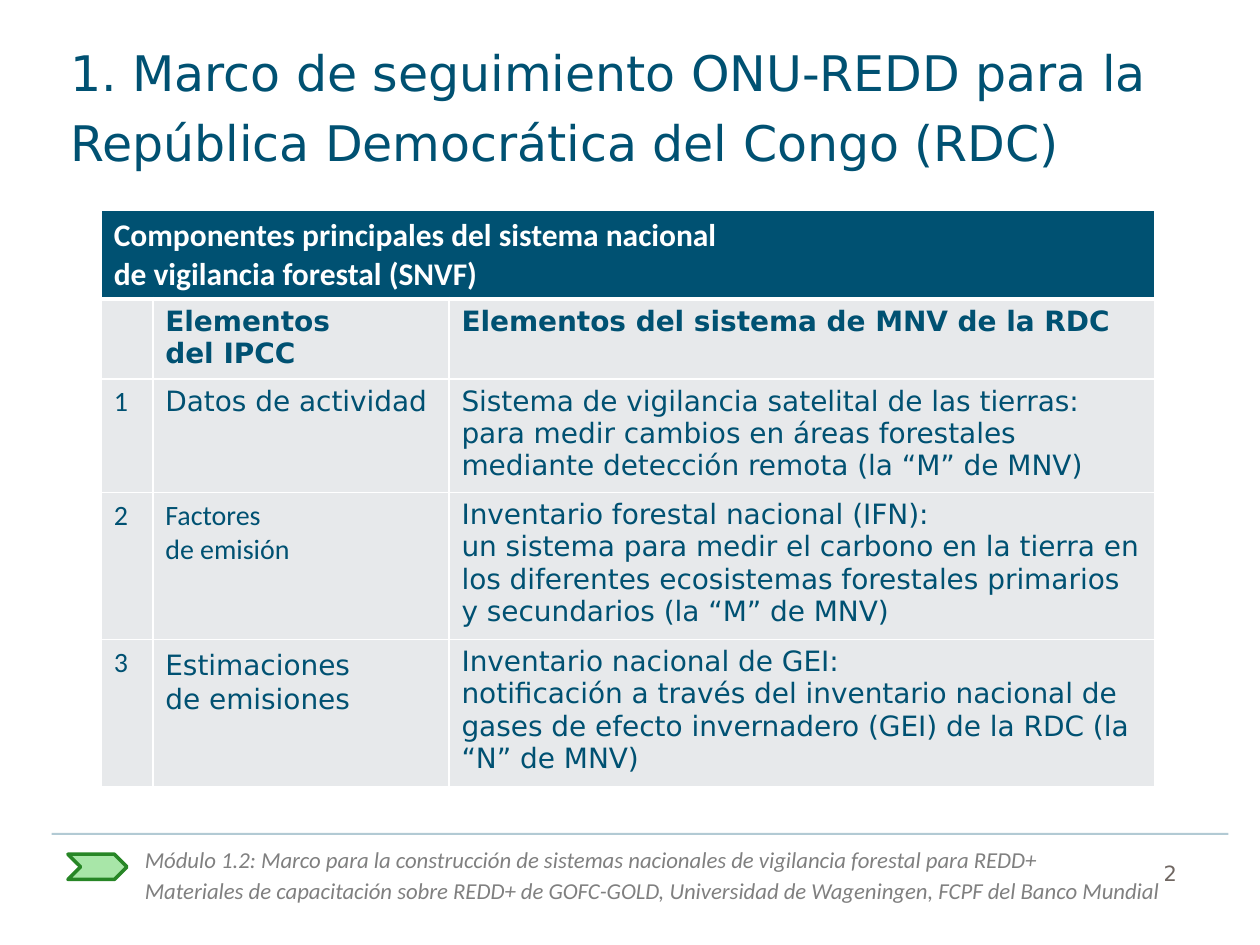
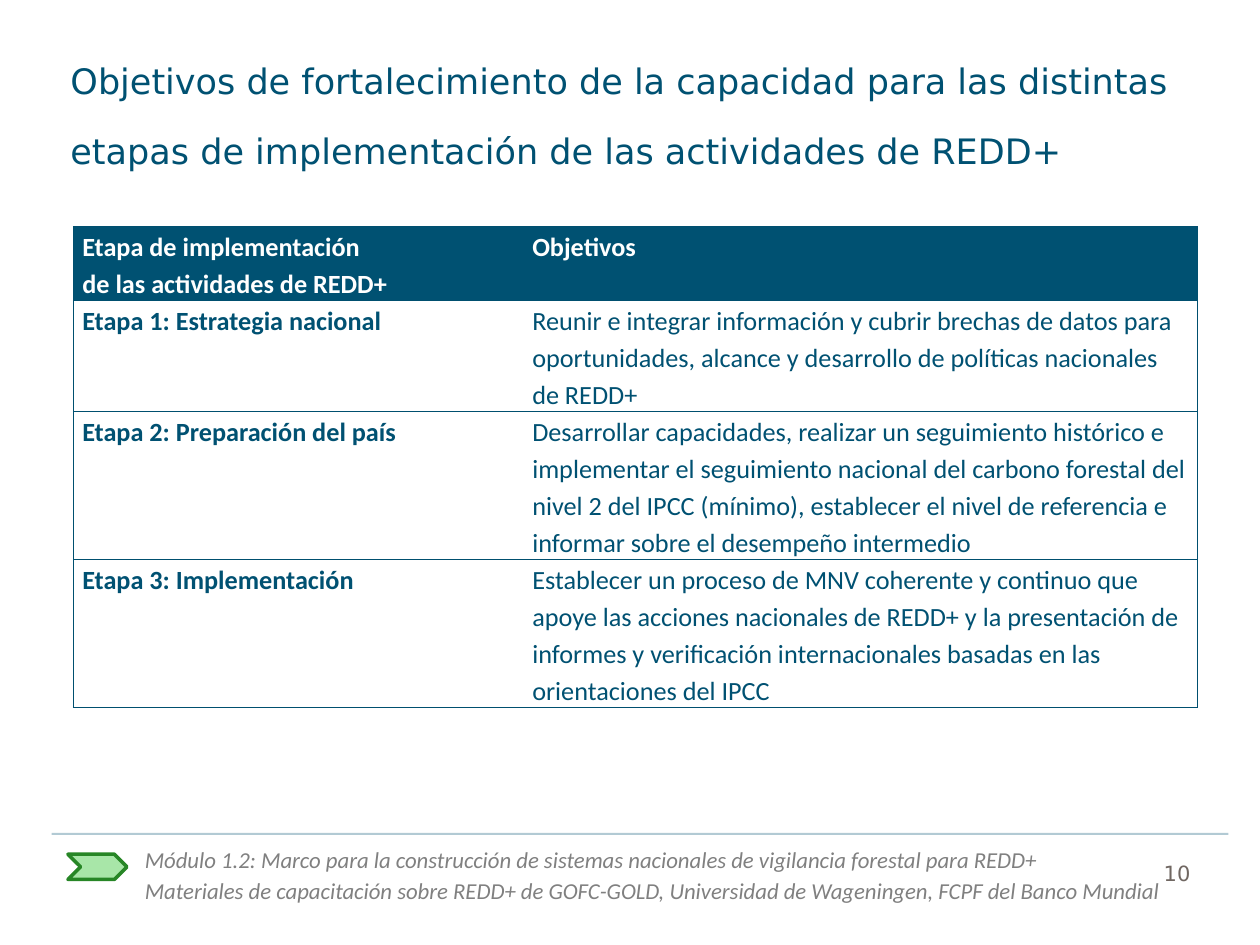
from lxml import etree
from pptx import Presentation
from pptx.dml.color import RGBColor
from pptx.enum import shapes, text
from pptx.oxml import ns
from pptx.util import Cm, Pt

# Shared colours and fonts
TEAL = RGBColor(0x00, 0x51, 0x72)
RULE = RGBColor(0x00, 0x4F, 0x6F)
WHITE = RGBColor(0xFF, 0xFF, 0xFF)
PALE = RGBColor(0xE7, 0xE9, 0xEB)
GREY = RGBColor(0x80, 0x80, 0x80)
BROWN = RGBColor(0x70, 0x67, 0x62)
LIME = RGBColor(0xA8, 0xE6, 0xA8)
GREEN = RGBColor(0x27, 0x86, 0x26)
SANS = "DejaVu Sans"
BODY = "Calibri"

FOOT = (
    "Módulo 1.2: Marco para la construcción de sistemas nacionales de vigilancia forestal para REDD+\n"
    "Materiales de capacitación sobre REDD+ de GOFC-GOLD, Universidad de Wageningen, FCPF del Banco Mundial"
)

PARTS = [
    ("Componentes principales del sistema nacional \vde vigilancia forestal (SNVF)", "", ""),
    ("", "Elementos \vdel IPCC", "Elementos del sistema de MNV de la RDC"),
    ("1", "Datos de actividad",
     "Sistema de vigilancia satelital de las tierras:\n"
     "para medir cambios en áreas forestales mediante detección remota (la “M” de MNV)"),
    ("2", "Factores \vde emisión",
     "Inventario forestal nacional (IFN):\n"
     "un sistema para medir el carbono en la tierra en los diferentes ecosistemas "
     "forestales primarios y secundarios (la “M” de MNV)"),
    ("3", "Estimaciones \vde emisiones",
     "Inventario nacional de GEI:\n"
     "notificación a través del inventario nacional de gases de efecto invernadero (GEI) "
     "de la RDC (la “N” de MNV)"),
]

STAGES = [
    ("Etapa de implementación \vde las actividades de REDD+", "Objetivos"),
    ("Etapa 1: Estrategia nacional",
     "Reunir e integrar información y cubrir brechas de datos para oportunidades, "
     "alcance y desarrollo de políticas nacionales de REDD+"),
    ("Etapa 2: Preparación del país",
     "Desarrollar capacidades, realizar un seguimiento histórico e implementar el "
     "seguimiento nacional del carbono forestal del nivel 2 del IPCC (mínimo), establecer "
     "el nivel de referencia e informar sobre el desempeño intermedio"),
    ("Etapa 3: Implementación",
     "Establecer un proceso de MNV coherente y continuo que apoye las acciones nacionales "
     "de REDD+ y la presentación de informes y verificación internacionales basadas en las "
     "orientaciones del IPCC"),
]


def write(frame, words, size, face, color, bold=False, italic=False, gap=None):
    """Fill a text frame with evenly styled paragraphs."""
    frame.word_wrap = True
    frame.text = words
    for para in frame.paragraphs:
        para.alignment = text.PP_ALIGN.LEFT
        if gap:
            para.line_spacing = gap
        font = para.font
        font.size, font.name = Pt(size), face
        font.bold, font.italic = bold, italic
        font.color.rgb = color


def edge(cell, side, color, width):
    """Add one cell border (L, R, T, B in that order); no colour hides it."""
    line = etree.SubElement(cell._tc.get_or_add_tcPr(), ns.qn("a:ln" + side), w=str(Pt(width)))
    if color is None:
        etree.SubElement(line, ns.qn("a:noFill"))
    else:
        fill = etree.SubElement(line, ns.qn("a:solidFill"))
        etree.SubElement(fill, ns.qn("a:srgbClr"), val=str(color))


def grid(slide, left, top, cols, rows):
    """Add a plain table with the given column widths and row heights in cm."""
    frame = slide.shapes.add_table(len(rows), len(cols), Cm(left), Cm(top),
                                   Cm(sum(cols)), Cm(sum(rows)))
    table = frame.table
    table.first_row = table.horz_banding = False
    for col, width in zip(table.columns, cols):
        col.width = Cm(width)
    for row, height in zip(table.rows, rows):
        row.height = Cm(height)
    return table


def head(slide, words, size, left, top, width, height):
    title = slide.shapes.title
    title.left, title.top = Cm(left), Cm(top)
    title.width, title.height = Cm(width), Cm(height)
    frame = title.text_frame
    frame.auto_size = text.MSO_AUTO_SIZE.NONE
    frame.vertical_anchor = text.MSO_ANCHOR.TOP
    frame.margin_left, frame.margin_right = Cm(0.05), Cm(0.25)
    frame.margin_top, frame.margin_bottom = 0, Cm(0.89)
    write(frame, words, size, SANS, TEAL, gap=Pt(40))


def foot(slide, number, left, top, width):
    # Module and source
    note = slide.shapes.add_textbox(Cm(left + 1.63), Cm(top + 0.03), Cm(21.34), Cm(1.55))
    write(note.text_frame, FOOT, 13, BODY, GREY, italic=True, gap=Pt(18))

    # Green marker
    mark = slide.shapes.add_shape(shapes.MSO_SHAPE.CHEVRON, Cm(left + 0.33), Cm(top + 0.41),
                                  Cm(1.19), Cm(0.51))
    mark.shadow.inherit = False
    mark.fill.solid()
    mark.fill.fore_color.rgb = LIME
    mark.line.color.rgb = GREEN
    mark.line.width = Pt(2)

    # Page number
    page = slide.shapes.add_textbox(Cm(left + width - 1.55), Cm(top + 0.28), Cm(1.55), Cm(0.84))
    write(page.text_frame, number, 12, SANS, BROWN, gap=Pt(18))

    # Faint rule
    rule = slide.shapes.add_connector(shapes.MSO_CONNECTOR.STRAIGHT, Cm(left), Cm(top),
                                      Cm(left + width), Cm(top))
    rule.line.color.rgb = TEAL
    rule.line.width = Pt(1.25)
    tint = rule._element.spPr.find(".//" + ns.qn("a:srgbClr"))
    etree.SubElement(tint, ns.qn("a:alpha"), val="30000")
    etree.SubElement(rule._element.spPr, ns.qn("a:effectLst"))


def parts(slide, left, top):
    """Table of monitoring system components."""
    table = grid(slide, left, top, (1.04, 5.97, 14.22), (1.79, 1.55, 2.21, 2.87, 2.87))
    for r, row in enumerate(PARTS):
        for c, words in enumerate(row):
            cell = table.cell(r, c)
            for side in "LRTB":
                thick = (r, side) in ((0, "B"), (1, "T"))
                edge(cell, side, WHITE, 3 if thick else 1)
            cell.fill.solid()
            cell.fill.fore_color.rgb = PALE if r else TEAL
            if not words:
                continue
            if r == 0:
                write(cell.text_frame, words, 18, BODY, WHITE, bold=True)
            else:
                face = BODY if c == 0 or (r, c) == (3, 1) else SANS
                write(cell.text_frame, words, 16, face, TEAL, bold=r == 1)
    table.cell(0, 0).merge(table.cell(0, 2))

    # The last label has a larger space before its line break
    para = table.cell(4, 1).text_frame.paragraphs[0]
    para.clear()
    para.add_run().text = "Estimaciones"
    space = para.add_run()
    space.text = " "
    space.font.size, space.font.name = Pt(18), BODY
    para.add_line_break()
    para.add_run().text = "de emisiones"


def stages(slide, left, top):
    """Table of stages and goals."""
    table = grid(slide, left, top, (9.07, 13.59), (1.49, 2.24, 2.98, 2.98))
    for r, row in enumerate(STAGES):
        for c, words in enumerate(row):
            cell = table.cell(r, c)
            edge(cell, "L", None if c else RULE, 0.75)
            edge(cell, "R", RULE if c else None, 0.75)
            edge(cell, "T", RULE, 0.75)
            edge(cell, "B", RULE, 0.75)
            if r:
                cell.fill.background()
            else:
                cell.fill.solid()
                cell.fill.fore_color.rgb = TEAL
            cell.margin_left = cell.margin_right = Cm(0.18)
            cell.margin_top = cell.margin_bottom = 0
            write(cell.text_frame, words, 15, BODY, TEAL if r else WHITE,
                  bold=r == 0 or c == 0, gap=1.15)


def page(deck, words, size, height, number):
    """Add a slide with the shared title and footer."""
    slide = deck.slides.add_slide(deck.slide_layouts[5])
    foot(slide, number, 1.04, 16.81, 23.72)
    head(slide, words, size, 1.37, 0.64, 23.44, height)
    return slide


def main():
    deck = Presentation()
    deck.slide_width, deck.slide_height = Cm(25.4), Cm(19.05)
    first = page(deck, "1. Marco de seguimiento ONU-REDD para la República Democrática "
                 "del Congo (RDC)", 28, 2.97, "2")
    parts(first, 2.04, 4.24)
    second = page(deck, "Objetivos de fortalecimiento de la capacidad para las distintas "
                  "etapas de implementación de las actividades de REDD+", 20, 3.56, "10")
    stages(second, 1.48, 4.57)
    deck.save("out.pptx")


if __name__ == "__main__":
    main()
